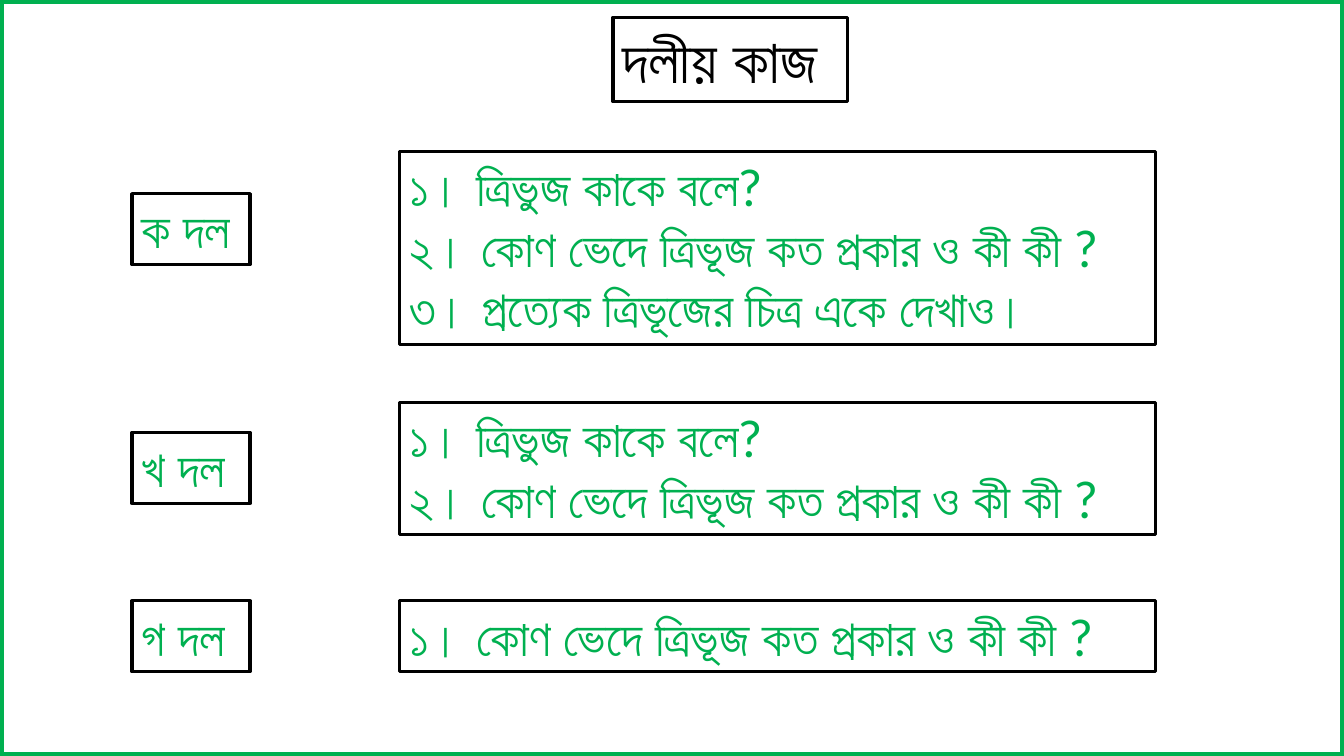
from lxml.etree import SubElement
from pptx import Presentation
from pptx.dml.color import RGBColor
from pptx.enum.shapes import MSO_SHAPE as SHAPE
from pptx.enum.text import MSO_ANCHOR as ANCHOR, MSO_AUTO_SIZE as AUTO, PP_ALIGN as ALIGN
from pptx.oxml.ns import qn
from pptx.util import Inches, Pt

COLORS = {"green": "00B050", "black": "000000"}
FONT = "Lato"
WIDTH, HEIGHT = 13.33, 7.5
LABEL_X, LABEL_W = 1.31, 1.17
TASK_X, TASK_W = 3.96, 7.5
LINE_H, PADDING = 0.605, 0.1

WHAT = "ত্রিভুজ কাকে বলে?"
KINDS = "কোণ ভেদে ত্রিভূজ কত প্রকার ও কী কী ?"
DRAW = "প্রত্যেক ত্রিভূজের চিত্র একে দেখাও।"
# group name, label top, tasks top, tasks
GROUPS = [
    ("ক দল", 1.92, 1.5, [WHAT, KINDS, DRAW]),
    ("খ দল", 4.29, 3.99, [WHAT, KINDS]),
    ("গ দল", 5.96, 5.96, [KINDS]),
]


def rgb(name):
    return RGBColor.from_string(COLORS[name])


def outline_box(s, box, color, weight):
    sp = s.shapes.add_shape(SHAPE.RECTANGLE, *map(Inches, box))
    sp.shadow.inherit = False
    sp.fill.background()
    sp.line.color.rgb = rgb(color)
    sp.line.width = Pt(weight)
    return sp


def text_box(s, box, lines, size=36, color="green"):
    tf = outline_box(s, box, "black", 2.25).text_frame
    frame_format = {"word_wrap": True, "auto_size": AUTO.SHAPE_TO_FIT_TEXT,
                    "vertical_anchor": ANCHOR.TOP}
    for name, value in frame_format.items():
        setattr(tf, name, value)
    for i, line in enumerate(lines):
        p = tf.paragraphs[0] if i == 0 else tf.add_paragraph()
        p.alignment = ALIGN.LEFT
        r = p.add_run()
        r.text = line
        for name, value in {"size": Pt(size), "name": FONT}.items():
            setattr(r.font, name, value)
        r.font.color.rgb = rgb(color)
        # Bengali takes the complex-script font
        SubElement(r._r.get_or_add_rPr(), qn("a:cs"), typeface=FONT)


def group_row(s, name, label_y, tasks_y, tasks):
    text_box(s, (LABEL_X, label_y, LABEL_W, LINE_H + PADDING), [name])
    lines = [f"{digit}। {task}" for digit, task in zip("১২৩", tasks)]
    text_box(s, (TASK_X, tasks_y, TASK_W, len(lines) * LINE_H + PADDING), lines)


def group_work_slide(prs):
    s = prs.slides.add_slide(prs.slide_layouts[6])
    # Frame and title
    outline_box(s, (0, 0, WIDTH, HEIGHT), "green", 6)
    text_box(s, (6.08, 0.17, 2.33, 0.84), ["দলীয় কাজ"], 44, "black")
    # Groups with their tasks
    for group in GROUPS:
        group_row(s, *group)


def main():
    prs = Presentation()
    prs.slide_width, prs.slide_height = Inches(WIDTH), Inches(HEIGHT)
    group_work_slide(prs)
    prs.save("out.pptx")


if __name__ == "__main__":
    main()
